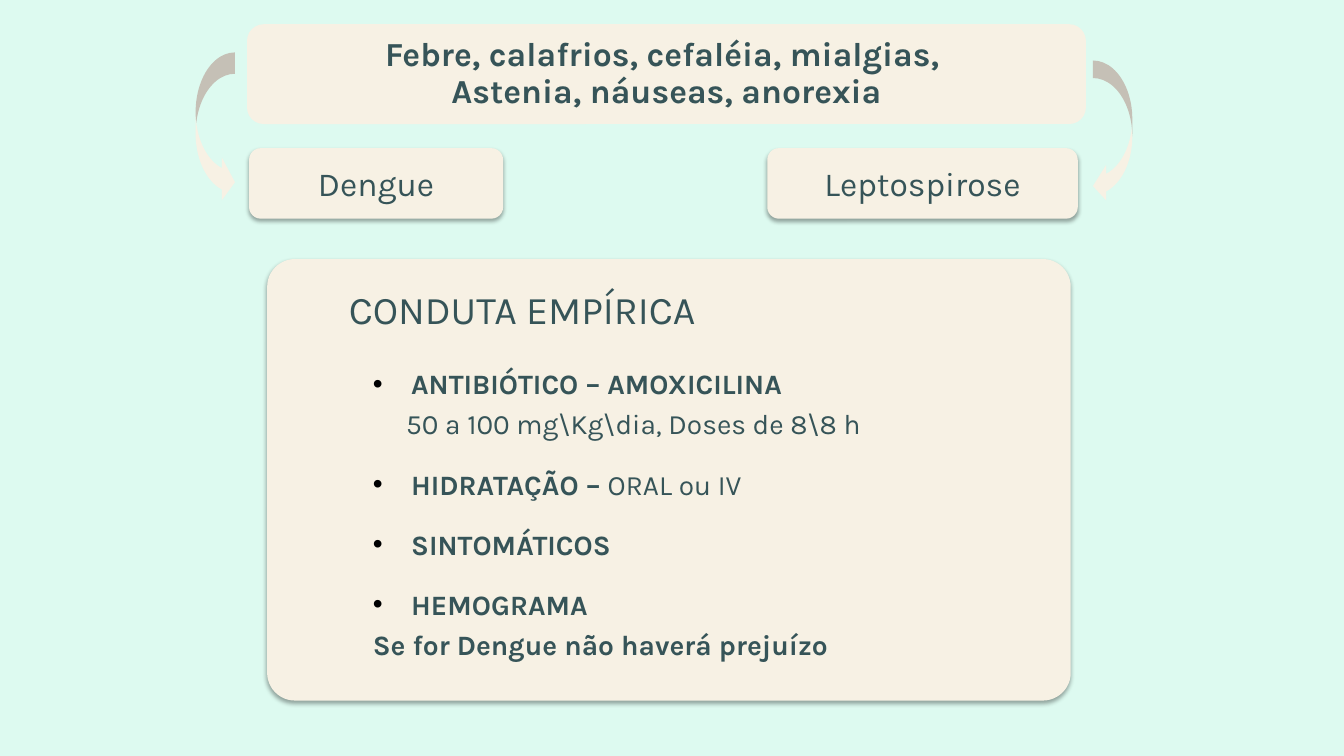
"""Builds the slide on symptoms, suspected diseases and empirical treatment."""
from lxml import etree
from pptx import Presentation
from pptx.dml.color import RGBColor
from pptx.enum.shapes import MSO_SHAPE
from pptx.enum.text import MSO_ANCHOR, MSO_AUTO_SIZE, PP_ALIGN
from pptx.oxml.ns import qn
from pptx.util import Inches, Pt

ROUNDED = MSO_SHAPE.ROUNDED_RECTANGLE
ARROW_LEFT, ARROW_RIGHT = MSO_SHAPE.CURVED_LEFT_ARROW, MSO_SHAPE.CURVED_RIGHT_ARROW
TOP, MIDDLE = MSO_ANCHOR.TOP, MSO_ANCHOR.MIDDLE
LEFT, CENTER = PP_ALIGN.LEFT, PP_ALIGN.CENTER
NO_FIT = MSO_AUTO_SIZE.NONE

COLORS = {"mint": "DDFAF0", "cream": "F7F1E4", "ink": "365458", "black": "000000"}
FONT = "Karla"
HANGING = 0.38


class SlideBuilder:
    """Holds the style and the current slide."""

    def __init__(self, slide):
        """Keep the slide and paint its background."""
        self.slide = slide
        self.paint(slide.background.fill, "mint")

    def paint(self, fill, color):
        """Fill with one named colour."""
        fill.solid()
        fill.fore_color.rgb = RGBColor.from_string(COLORS[color])

    def apply(self, target, formats):
        """Set each format value on the target."""
        for attribute, value in formats.items():
            setattr(target, attribute, value)

    def add_runs(self, paragraph, runs, size, **formats):
        """Add (text, bold) runs to a paragraph."""
        self.apply(paragraph, formats)
        for text, bold in runs:
            run = paragraph.add_run()
            run.text = text
            self.apply(run.font, {"name": FONT, "size": Pt(size), "bold": bold})
            run.font.color.rgb = RGBColor.from_string(COLORS["ink"])

    def shape(self, preset, box, adjustments=(), shadow=False):
        """Add a cream preset shape without an outline."""
        shape = self.slide.shapes.add_shape(preset, *map(Inches, box))
        for index, value in enumerate(adjustments):
            shape.adjustments[index] = value
        self.paint(shape.fill, "cream")
        shape.line.fill.background()
        shape.shadow.inherit = False
        if shadow:
            self.drop_shadow(shape)
        return shape

    def drop_shadow(self, shape):
        """Give the shape a soft shadow straight below it."""
        effects = shape.element.spPr.find(qn("a:effectLst"))
        outer = etree.SubElement(effects, qn("a:outerShdw"), blurRad=str(Pt(3.1)),
                                 dist=str(Pt(1.8)), dir="5400000", rotWithShape="0")
        color = etree.SubElement(outer, qn("a:srgbClr"), val=COLORS["black"])
        etree.SubElement(color, qn("a:alpha"), val="35000")

    def card(self, box, lines, bold=False, shadow=True, wrap=True, **formats):
        """Add a rounded card with centred lines."""
        frame = self.shape(ROUNDED, box, shadow=shadow).text_frame
        self.apply(frame, {"word_wrap": wrap, "vertical_anchor": MIDDLE})
        for index, line in enumerate(lines):
            paragraph = frame.add_paragraph() if index else frame.paragraphs[0]
            self.add_runs(paragraph, [(line, bold)], 24, alignment=CENTER, **formats)

    def title(self, text, box):
        """Place the title in front of the shapes drawn so far."""
        title = self.slide.shapes.title
        self.apply(title, dict(zip(("left", "top", "width", "height"), map(Inches, box))))
        title.element.getparent().append(title.element)
        frame = title.text_frame
        self.apply(frame, {"word_wrap": True, "vertical_anchor": TOP, "auto_size": NO_FIT})
        self.add_runs(frame.paragraphs[0], [(text, False)], 28, alignment=LEFT)

    def steps(self, box, items):
        """Add the list of (runs, bulleted, indent, space before) items."""
        frame = self.slide.shapes.add_textbox(*map(Inches, box)).text_frame
        self.apply(frame, {"word_wrap": True, "margin_top": Inches(0.28)})
        for index, (runs, bulleted, indent, gap) in enumerate(items):
            paragraph = frame.add_paragraph() if index else frame.paragraphs[0]
            self.add_runs(paragraph, runs, 20, space_before=Pt(gap))
            properties = paragraph._p.get_or_add_pPr()
            properties.set("marL", str(Inches(indent)))
            if bulleted:
                self.bullet(properties)

    def bullet(self, properties):
        """Add a black hanging bullet."""
        properties.set("indent", str(-Inches(HANGING)))
        color = etree.SubElement(properties, qn("a:buClr"))
        etree.SubElement(color, qn("a:srgbClr"), val=COLORS["black"])
        etree.SubElement(properties, qn("a:buFont"), typeface="Arial")
        etree.SubElement(properties, qn("a:buChar"), char="•")


def main():
    """Build and save the slide."""
    deck = Presentation()
    deck.slide_width, deck.slide_height = Inches(13.33), Inches(7.5)
    builder = SlideBuilder(deck.slides.add_slide(deck.slide_layouts[5]))

    builder.shape(ROUNDED, (2.65, 2.57, 7.97, 4.38), [0.063], shadow=True)
    builder.card((2.45, 0.24, 8.32, 0.99),
                 ["Febre, calafrios, cefaléia, mialgias, ", "Astenia, náuseas, anorexia"],
                 bold=True, shadow=False, wrap=False, line_spacing=0.9)
    builder.steps((3.6, 3.36, 6.64, 2.69), [
        ([("ANTIBIÓTICO – AMOXICILINA", True)], True, HANGING, 0),
        ([("50 a 100 mg\\Kg\\dia, Doses de 8\\8 h", False)], False, 0.33, 4.6),
        ([("HIDRATAÇÃO – ", True), ("ORAL ou IV", False)], True, HANGING, 19.2),
        ([("SINTOMÁTICOS", True)], True, HANGING, 18.7),
        ([("HEMOGRAMA", True)], True, HANGING, 18.7),
        ([("Se for Dengue não haverá prejuízo", True)], False, 0, 4.6),
    ])
    builder.shape(ARROW_LEFT, (10.84, 0.6, 0.39, 1.42), [0.447, 0.895, 0.333])
    builder.shape(ARROW_RIGHT, (1.94, 0.52, 0.39, 1.5), [0.543, 1.086, 0.333])
    builder.title("CONDUTA EMPÍRICA", (3.36, 2.78, 6.88, 0.57))
    for disease, left, width in (("Leptospirose", 7.61, 3.08), ("Dengue", 2.47, 2.52)):
        builder.card((left, 1.47, width, 0.7), [disease])

    deck.save("out.pptx")


if __name__ == "__main__":
    main()
